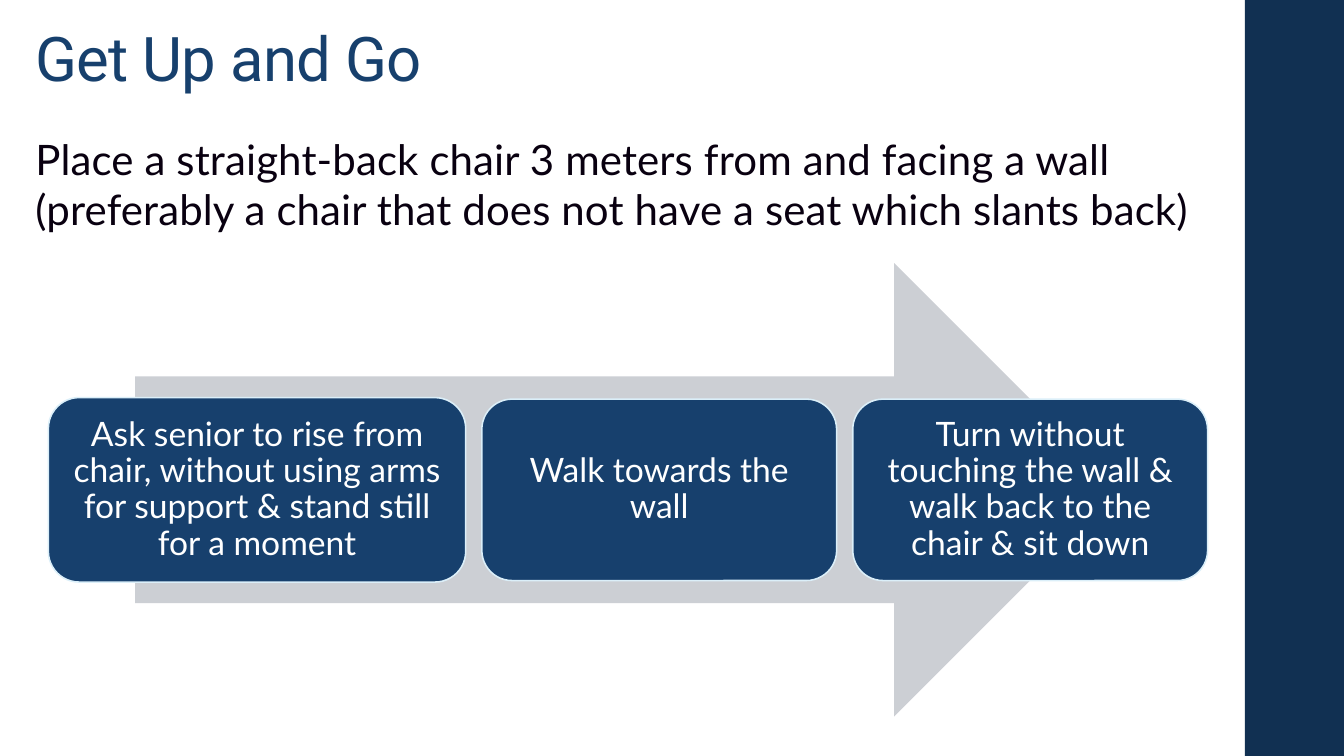
from dataclasses import dataclass

from pptx import Presentation
from pptx.dml.color import RGBColor
from pptx.enum.shapes import MSO_SHAPE as Preset
from pptx.enum.text import MSO_ANCHOR as Anchor, MSO_AUTO_SIZE as AutoSize, PP_ALIGN as Align
from pptx.oxml.ns import qn
from pptx.shapes.autoshape import Shape
from pptx.slide import Slide
from pptx.util import Emu, Inches, Pt

SLIDE_WIDTH, SLIDE_HEIGHT = Inches(13.33), Inches(7.5)
NAVY, BLUE, GREY = "113052", "17406D", "CCCFD4"
PALE, WHITE, INK = "DBEFF9", "FFFFFF", "090010"
HEADING_FONT, BODY_FONT = "Roboto", "Lato"


@dataclass(frozen=True)
class Box:
    """A place on the slide, in percent of its width and height."""
    left: float
    top: float
    width: float
    height: float

    def lengths(self) -> tuple[Emu, Emu, Emu, Emu]:
        return (Emu(int(SLIDE_WIDTH * self.left / 100)), Emu(int(SLIDE_HEIGHT * self.top / 100)),
                Emu(int(SLIDE_WIDTH * self.width / 100)), Emu(int(SLIDE_HEIGHT * self.height / 100)))


@dataclass(frozen=True)
class Step:
    text: str
    width: float
    height: float


@dataclass(frozen=True)
class TextStyle:
    font: str
    size: float
    color: str
    align: Align
    line_spacing: float
    tracking: int = 0  # hundredths of a point


TITLE_STYLE = TextStyle(HEADING_FONT, 44, BLUE, Align.LEFT, 0.9, -50)
BODY_STYLE = TextStyle(BODY_FONT, 30, INK, Align.LEFT, 1.0, 10)
STEP_STYLE = TextStyle(BODY_FONT, 24, WHITE, Align.CENTER, 0.9)

TEXT_LEFT = 1.88
SIDEBAR = Box(92.63, 0, 7.37, 100)
TITLE = Box(TEXT_LEFT, 0.93, 67.5, 14.4)
BODY = Box(TEXT_LEFT, 16.93, 93.75, 77.73)
ARROW = Box(10.05, 34.8, 73.35, 60)
STEPS_LEFT, STEP_GAP = 3.6, 1.2
STEPS = (
    Step("Ask senior to rise from chair, without using arms for support & stand still for a moment", 31.05, 24.4),
    Step("Walk towards the wall", 26.4, 24),
    Step("Turn without touching the wall & walk back to the chair & sit down", 26.4, 24),
)


def rgb(color: str) -> RGBColor:
    return RGBColor.from_string(color)


def write(shape: Shape, text: str, style: TextStyle, anchor: Anchor) -> None:
    frame = shape.text_frame
    frame.text = text
    frame.word_wrap = True
    frame.auto_size = AutoSize.NONE
    frame.vertical_anchor = anchor
    paragraph = frame.paragraphs[0]
    paragraph.alignment = style.align
    paragraph.line_spacing = style.line_spacing
    for run in paragraph.runs:
        run.font.name = style.font
        run.font.size = Pt(style.size)
        run.font.color.rgb = rgb(style.color)
        if style.tracking:
            run.font._element.set("spc", str(style.tracking))


def place(shape: Shape, box: Box) -> None:
    shape.left, shape.top, shape.width, shape.height = box.lengths()


def add_block(slide: Slide, preset: Preset, box: Box, fill: str) -> Shape:
    shape = slide.shapes.add_shape(preset, *box.lengths())
    shape.shadow.inherit = False
    shape.fill.solid()
    shape.fill.fore_color.rgb = rgb(fill)
    shape.line.fill.background()
    return shape


def add_steps(slide: Slide) -> None:
    """Set the steps in a row, centred on the arrow's axis."""
    axis = ARROW.top + ARROW.height / 2
    left = STEPS_LEFT
    for step in STEPS:
        box = Box(left, axis - step.height / 2, step.width, step.height)
        card = add_block(slide, Preset.ROUNDED_RECTANGLE, box, BLUE)
        card.line.color.rgb = rgb(PALE)
        card.line.width = Pt(1.1)
        write(card, step.text, STEP_STYLE, Anchor.MIDDLE)
        left += step.width + STEP_GAP


def main() -> None:
    presentation = Presentation()
    presentation.slide_width, presentation.slide_height = SLIDE_WIDTH, SLIDE_HEIGHT
    slide = presentation.slides.add_slide(presentation.slide_layouts[1])
    slide.background.fill.solid()
    slide.background.fill.fore_color.rgb = rgb(WHITE)

    # Sidebar
    add_block(slide, Preset.RECTANGLE, SIDEBAR, NAVY)

    # Title and instruction
    title, body = slide.placeholders
    place(title, TITLE)
    write(title, "Get Up and Go", TITLE_STYLE, Anchor.MIDDLE)
    place(body, BODY)
    write(body, "Place a straight-back chair 3 meters from and facing a wall "
                "(preferably a chair that does not have a seat which slants back)", BODY_STYLE, Anchor.TOP)
    paragraph = body.text_frame.paragraphs[0]
    paragraph.space_before, paragraph.space_after = Pt(14), Pt(2)
    properties = paragraph._p.get_or_add_pPr()
    properties.set("marL", "0")
    properties.set("indent", "0")
    properties.append(properties.makeelement(qn("a:buNone"), {}))

    # Arrow and its steps
    add_block(slide, Preset.RIGHT_ARROW, ARROW, GREY)
    add_steps(slide)

    presentation.save("out.pptx")


if __name__ == "__main__":
    main()
